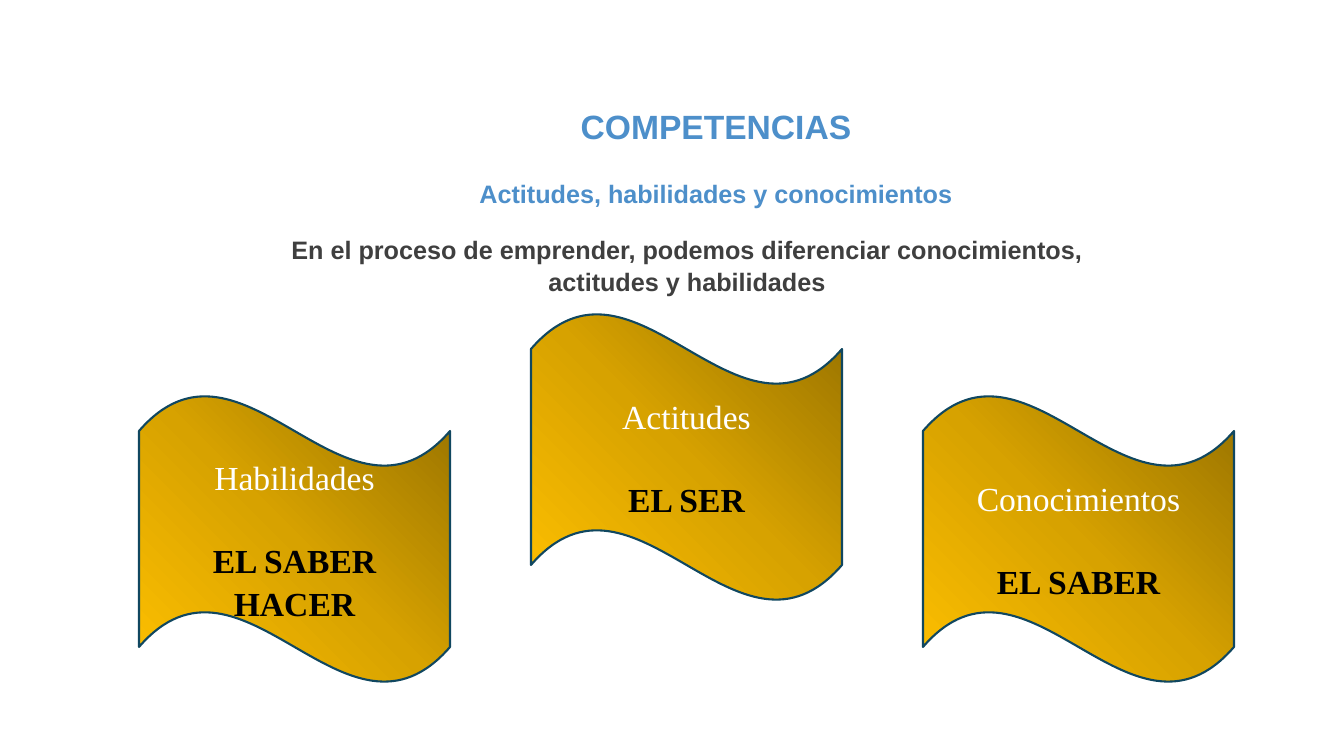
from lxml import etree
from pptx import Presentation
from pptx.dml.color import RGBColor
from pptx.enum.shapes import MSO_SHAPE
from pptx.enum.text import MSO_ANCHOR, MSO_AUTO_SIZE, PP_ALIGN
from pptx.oxml.ns import qn
from pptx.util import Pt

WAVE = MSO_SHAPE.WAVE
TOP, MIDDLE = MSO_ANCHOR.TOP, MSO_ANCHOR.MIDDLE
CENTER = PP_ALIGN.CENTER
NO_AUTOFIT = MSO_AUTO_SIZE.NONE

# Content
HEADING = "COMPETENCIAS"
SUBHEADING = "Actitudes, habilidades y conocimientos"
INTRO = ("En el proceso de emprender, podemos diferenciar conocimientos, "
         "actitudes y habilidades")
COMPETENCES = [  # name, meaning, top
    ("Habilidades", "EL SABER HACER", 395),
    ("Actitudes", "EL SER", 313),
    ("Conocimientos", "EL SABER", 395),
]
COLORS = {"heading": "4D8FCA", "intro": "3F3F3F", "name": "FFFFFF",
          "meaning": "000000", "outline": "104760"}
GOLD_STOPS = [(0, "977200"), (50, "D7A200"), (100, "FFC000")]

# Layout in px
SLIDE_W, SLIDE_H = 1344, 756
TITLE_BOX = (399, 99, 634, 130)
INTRO_BOX = (232, 228, 910, 80)
WAVE_LEFT, WAVE_STEP, WAVE_W, WAVE_H = 139, 392, 311, 288


def px(length):
    return round(length * 914400 / 100.8)


def place(shape, box):
    shape.left, shape.top, shape.width, shape.height = map(px, box)


def write(paragraph, text, *, size, color, font="Arial", bold=False, before=0):
    paragraph.alignment = CENTER
    paragraph.line_spacing = 1.05
    if before:
        paragraph.space_before = Pt(before)
    run = paragraph.add_run()
    run.text = text
    run.font.name = font
    run.font.size = Pt(size)
    run.font.bold = bold
    run.font.color.rgb = RGBColor.from_string(COLORS[color])


def prepare(shape, anchor):
    frame = shape.text_frame
    frame.word_wrap = True
    frame.auto_size = NO_AUTOFIT
    frame.vertical_anchor = anchor
    return frame


def fill_gold(shape):
    shape.fill.gradient()
    shape.fill.gradient_angle = 225
    stops = shape.element.spPr.find(".//" + qn("a:gsLst"))
    for stop in list(stops):
        stops.remove(stop)
    for percent, color in GOLD_STOPS:
        stop = etree.SubElement(stops, qn("a:gs"), pos=str(percent * 1000))
        etree.SubElement(stop, qn("a:srgbClr"), val=color)


prs = Presentation()
prs.slide_width, prs.slide_height = px(SLIDE_W), px(SLIDE_H)
slide = prs.slides.add_slide(prs.slide_layouts[5])

# Heading and subheading
title = slide.shapes.title
place(title, TITLE_BOX)
heading = prepare(title, TOP)
write(heading.paragraphs[0], HEADING, size=24, color="heading", bold=True)
write(heading.add_paragraph(), SUBHEADING, size=18, color="heading",
      bold=True, before=22)

# Introduction
intro = slide.shapes.add_textbox(*map(px, INTRO_BOX))
write(prepare(intro, TOP).paragraphs[0], INTRO, size=18, color="intro", bold=True)

# Competence waves
for column, (name, meaning, top) in enumerate(COMPETENCES):
    box = (WAVE_LEFT + column * WAVE_STEP, top, WAVE_W, WAVE_H)
    wave = slide.shapes.add_shape(WAVE, *map(px, box))
    wave.shadow.inherit = False
    fill_gold(wave)
    wave.line.color.rgb = RGBColor.from_string(COLORS["outline"])
    wave.line.width = Pt(1.5)
    label = prepare(wave, MIDDLE)
    write(label.paragraphs[0], name, size=24, color="name", font="Times New Roman")
    write(label.add_paragraph(), meaning, size=24, color="meaning",
          font="Times New Roman", bold=True, before=29)

prs.save("out.pptx")
